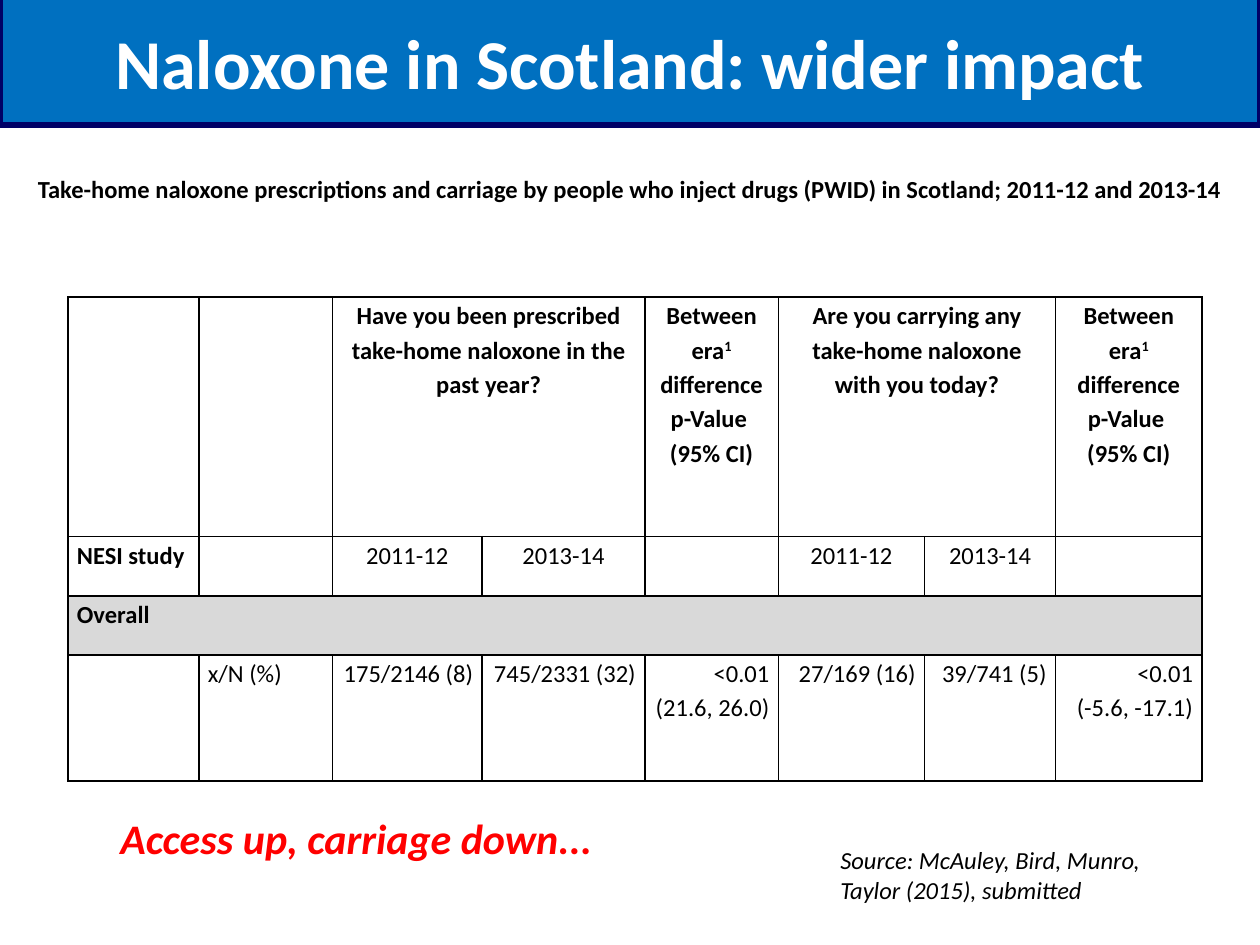
import pptx
import pptx.dml.color
import pptx.enum.text
import pptx.oxml
import pptx.oxml.ns
import pptx.util
from pptx.util import Cm

ALIGN = pptx.enum.text.PP_ALIGN
ANCHOR = pptx.enum.text.MSO_ANCHOR
FIT = pptx.enum.text.MSO_AUTO_SIZE
FONT = "Calibri"

COLUMN_WIDTHS = [2.64, 2.69, 3.02, 3.28, 2.69, 2.95, 2.64, 2.95]
ROW_HEIGHTS = [4.83, 1.19, 1.19, 2.54]
# "^" surrounds superscript text, "\n" starts a new paragraph
ERA_HEADER = "Between era^1^ difference\np-Value \n(95% CI)"
ROWS = [
    ["", "", "Have you been prescribed take-home naloxone in the past year?", "",
     ERA_HEADER, "Are you carrying any take-home naloxone with you today?", "",
     ERA_HEADER],
    ["NESI study", "", "2011-12", "2013-14", "", "2011-12", "2013-14", ""],
    ["Overall"] + [""] * 7,
    ["", "x/N (%)", "175/2146 (8)", "745/2331 (32)", "<0.01\n(21.6, 26.0)",
     "27/169 (16)", "39/741 (5)", "<0.01\n (-5.6, -17.1)"],
]
# First and last cell of each merged range, as (row, column)
MERGES = [((0, 2), (0, 3)), ((0, 5), (0, 6)), ((2, 0), (2, 7))]


def color(value):
    return pptx.dml.color.RGBColor.from_string(value)


def write(frame, text, size=14, fill="000000", bold=False, italic=False,
          align=ALIGN.LEFT, spacing=None):
    for index, line in enumerate(text.split("\n")):
        para = frame.add_paragraph() if index else frame.paragraphs[0]
        para.alignment = align
        if spacing:
            para.line_spacing = spacing
        for position, part in enumerate(line.split("^")):
            span = para.add_run()
            span.text = part
            span.font.name = FONT
            span.font.size = pptx.util.Pt(size)
            span.font.bold = bold
            span.font.italic = italic
            span.font.color.rgb = color(fill)
            if position % 2:
                span.font._element.set("baseline", "30000")


def add_title(page, left, top, width, height):
    title = page.shapes.title
    title.left, title.top = Cm(left), Cm(top)
    title.width, title.height = Cm(width), Cm(height)
    title.fill.solid()
    title.fill.fore_color.rgb = color("0070C0")
    title.line.color.rgb = color("000066")
    title.line.width = pptx.util.Pt(3)
    frame = title.text_frame
    frame.auto_size = FIT.NONE
    frame.vertical_anchor = ANCHOR.MIDDLE
    write(frame, "Naloxone in Scotland: wider impact", size=40,
          fill="FFFFFF", bold=True, align=ALIGN.CENTER)


def add_text(page, left, top, width, height, text, wrap=True,
             anchor=ANCHOR.TOP, **style):
    box = page.shapes.add_textbox(Cm(left), Cm(top), Cm(width), Cm(height))
    frame = box.text_frame
    frame.word_wrap = wrap
    frame.auto_size = FIT.SHAPE_TO_FIT_TEXT
    frame.vertical_anchor = anchor
    write(frame, text, **style)


def add_borders(cell):
    properties = cell._tc.get_or_add_tcPr()
    for side in ("lnL", "lnR", "lnT", "lnB"):
        properties.append(pptx.oxml.parse_xml(
            f'<a:{side} {pptx.oxml.ns.nsdecls("a")} w="12700"><a:solidFill>'
            f'<a:srgbClr val="000000"/></a:solidFill></a:{side}>'))


def cell_align(row, column):
    if row < 2 and column > 1:
        return ALIGN.CENTER
    return ALIGN.RIGHT if row == 3 and column > 1 else ALIGN.LEFT


def add_naloxone_table(page, left, top):
    table = page.shapes.add_table(
        len(ROW_HEIGHTS), len(COLUMN_WIDTHS), Cm(left), Cm(top),
        Cm(sum(COLUMN_WIDTHS)), Cm(sum(ROW_HEIGHTS))).table
    table.first_row = table.horz_banding = False
    for column, width in zip(table.columns, COLUMN_WIDTHS):
        column.width = Cm(width)
    for row, height in zip(table.rows, ROW_HEIGHTS):
        row.height = Cm(height)
    for first, last in MERGES:
        table.cell(*first).merge(table.cell(*last))

    for row, texts in enumerate(ROWS):
        for column, text in enumerate(texts):
            cell = table.cell(row, column)
            add_borders(cell)
            cell.fill.solid()
            cell.fill.fore_color.rgb = color("D9D9D9" if row == 2 else "FFFFFF")
            if text:
                cell.margin_left = cell.margin_right = Cm(0.18)
                cell.margin_top = cell.margin_bottom = 0
                write(cell.text_frame, text, bold=row == 0 or column == 0,
                      align=cell_align(row, column), spacing=1.15)


def main():
    deck = pptx.Presentation()
    deck.slide_width, deck.slide_height = Cm(25.4), Cm(19.05)
    page = deck.slides.add_slide(deck.slide_layouts[5])

    # Title band and table caption
    add_title(page, 0, -0.05, 25.4, 2.57)
    add_text(page, 0.43, 3.38, 24.54, 0.86,
             "Take-home naloxone prescriptions and carriage by people who "
             "inject drugs (PWID) in Scotland; 2011-12 and 2013-14",
             wrap=False, anchor=ANCHOR.MIDDLE, bold=True, align=ALIGN.CENTER)

    # Survey results
    add_naloxone_table(page, 1.37, 5.99)

    # Takeaway and source
    add_text(page, 2.18, 16.26, 21.36, 1.27, "Access up, carriage down...",
             size=24, fill="FF0000", bold=True, italic=True)
    add_text(page, 16.69, 16.92, 7.39, 1.45,
             "Source: McAuley, Bird, Munro, Taylor (2015), submitted",
             italic=True)

    deck.save("out.pptx")


if __name__ == "__main__":
    main()
